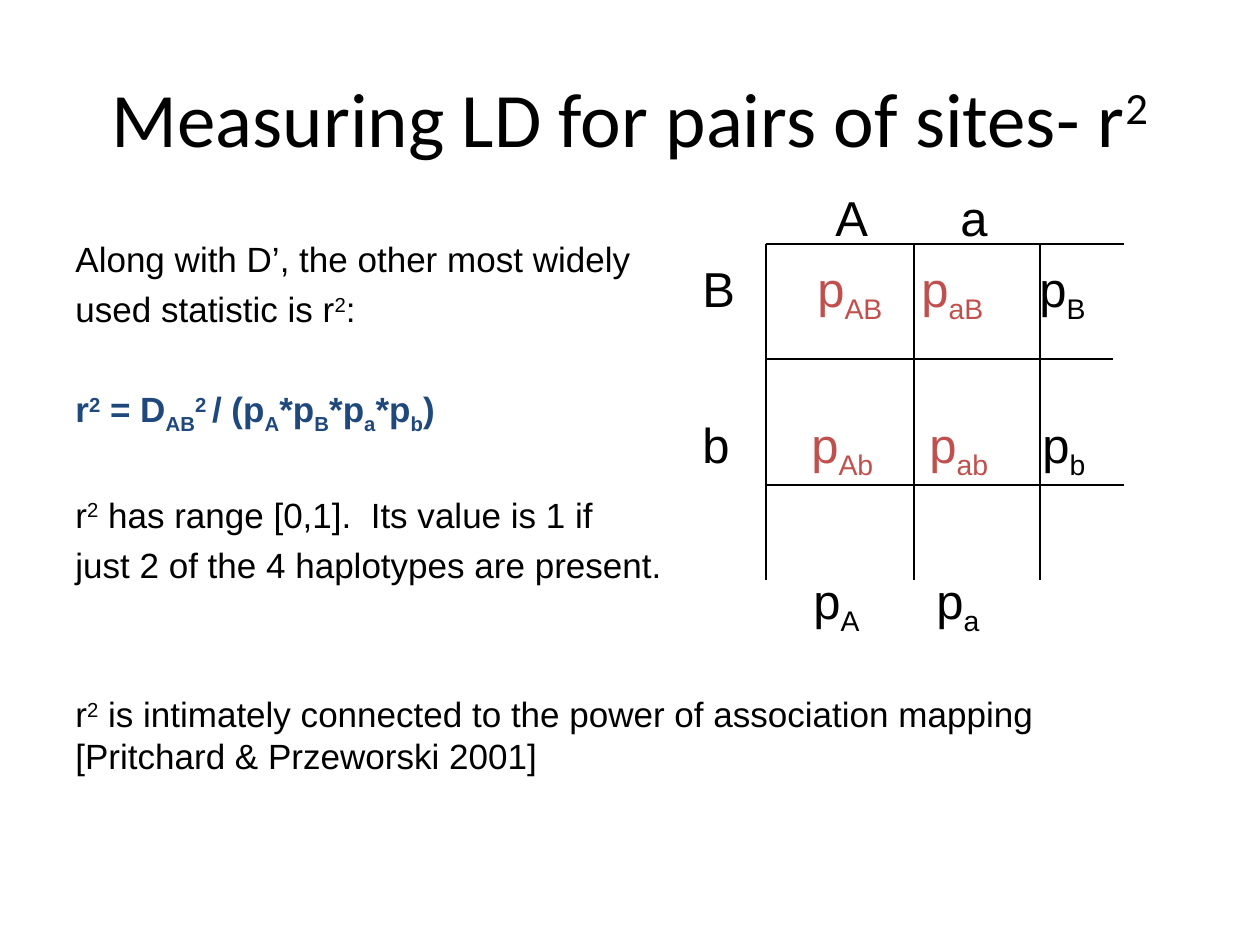
"""Build a slide on measuring linkage disequilibrium with r squared."""
from lxml import etree
from pptx import Presentation
from pptx.dml.color import RGBColor
from pptx.enum.shapes import MSO_CONNECTOR
from pptx.enum.text import MSO_ANCHOR, PP_ALIGN
from pptx.oxml.ns import qn
from pptx.util import Emu, Pt

PX = 914400 // 126
STRAIGHT = MSO_CONNECTOR.STRAIGHT
MIDDLE = MSO_ANCHOR.MIDDLE
CENTER = PP_ALIGN.CENTER
BLACK = RGBColor(0x00, 0x00, 0x00)
BLUE = RGBColor(0x1F, 0x49, 0x7D)
RED = RGBColor(0xC0, 0x50, 0x4D)
BASELINES = {"^": "30000", "_": "-25000"}

STATEMENTS = [
    ("Along with D’, the other most widely", 3, BLACK),
    ("used statistic is r|^2|:", 5, BLACK),
    ("r|^2| = D|_AB|^2 |/ (p|_A|*p|_B|*p|_a|*p|_b|)", 33, BLUE),
    ("r|^2| has range [0,1].  Its value is 1 if", 33, BLACK),
    ("just 2 of the 4 haplotypes are present.", 5, BLACK),
    ("r|^2| is intimately connected to the power of association mapping "
     "[Pritchard & Przeworski 2001]", 61, BLACK),
]
FREQUENCY_ROWS = [
    ("", 2, [(133, "A", BLACK), (258, "a", BLACK)]),
    ("B", 7, [(115, "p|_AB", RED), (219, "p|_aB", RED), (337, "p|_B", BLACK)]),
    ("b", 51, [(109, "p|_Ab", RED), (227, "p|_ab", RED), (340, "p|_b", BLACK)]),
    ("", 51, [(111, "p|_A", BLACK), (234, "p|_a", BLACK)]),
]
GRID_LEFT, GRID_TOP, GRID_BOTTOM = 766, 244, 580
GRID_COLUMNS = [GRID_LEFT, 914, 1040]
GRID_ROWS = [(GRID_TOP, 1124), (359, 1113), (485, 1124)]


def px(length):
    """Turn a length in px into EMU."""
    return Emu(length * PX)


def add_text_frame(slide, left, top, width, height):
    """Add a wrapping text box and return its text frame."""
    box = slide.shapes.add_textbox(px(left), px(top), px(width), px(height))
    box.text_frame.word_wrap = True
    return box.text_frame


def next_paragraph(frame, index):
    """Return the first paragraph of a frame, or a new one."""
    return frame.add_paragraph() if index else frame.paragraphs[0]


def style_paragraph(paragraph, size, name="Arial", color=BLACK, bold=False):
    """Set the font shared by all runs of a paragraph."""
    font = paragraph.font
    font.size, font.name, font.bold = Pt(size), name, bold
    font.color.rgb = color


def add_runs(paragraph, markup, color=None):
    """Add runs split at bars, with ^ raising and _ lowering a piece."""
    for piece in markup.split("|"):
        baseline = BASELINES.get(piece[0])
        run = paragraph.add_run()
        run.text = piece[1:] if baseline else piece
        if baseline:
            run.font._element.set("baseline", baseline)
        if color is not None:
            run.font.color.rgb = color


def add_tab_stops(paragraph, positions):
    """Give a paragraph left tab stops at the positions in px."""
    properties = paragraph._p.get_or_add_pPr()
    stops = etree.SubElement(properties, qn("a:tabLst"))
    for position in positions:
        etree.SubElement(stops, qn("a:tab"), pos=str(px(position)), algn="l")


def add_title(slide, markup):
    """Add the centred slide title."""
    frame = add_text_frame(slide, 63, 38, 1134, 157)
    frame.vertical_anchor = MIDDLE
    paragraph = frame.paragraphs[0]
    paragraph.alignment = CENTER
    style_paragraph(paragraph, 44, "Calibri")
    add_runs(paragraph, markup)


def add_statements(slide):
    """Add the explanation of the statistic."""
    frame = add_text_frame(slide, 63, 231, 1040, 556)
    for index, (markup, space, color) in enumerate(STATEMENTS):
        paragraph = next_paragraph(frame, index)
        paragraph.space_before = Pt(space)
        style_paragraph(paragraph, 20, color=color, bold=color == BLUE)
        add_runs(paragraph, markup)


def add_frequencies(slide):
    """Add the haplotype and allele frequencies, aligned by tab stops."""
    frame = add_text_frame(slide, 690, 181, 538, 449)
    for index, (label, space, cells) in enumerate(FREQUENCY_ROWS):
        paragraph = next_paragraph(frame, index)
        paragraph.space_before = Pt(space)
        add_tab_stops(paragraph, [position for position, _, _ in cells])
        style_paragraph(paragraph, 28)
        if label:
            add_runs(paragraph, label)
        for _, markup, color in cells:
            add_runs(paragraph, "\t" + markup, color)


def add_line(slide, start_x, start_y, end_x, end_y):
    """Add a thin black line without a shadow."""
    line = slide.shapes.add_connector(
        STRAIGHT, px(start_x), px(start_y), px(end_x), px(end_y))
    line.line.color.rgb = BLACK
    line.line.width = Pt(1)
    etree.SubElement(line._element.spPr, qn("a:effectLst"))


def add_grid(slide):
    """Add the lines of the frequency grid."""
    for x in GRID_COLUMNS:
        add_line(slide, x, GRID_TOP, x, GRID_BOTTOM)
    for y, right in GRID_ROWS:
        add_line(slide, GRID_LEFT, y, right, y)


def main():
    """Build and save the presentation."""
    presentation = Presentation()
    presentation.slide_width, presentation.slide_height = px(1260), px(945)
    slide = presentation.slides.add_slide(presentation.slide_layouts[6])
    add_title(slide, "Measuring LD for pairs of sites- r|^2")
    add_statements(slide)
    add_frequencies(slide)
    add_grid(slide)
    presentation.save("out.pptx")


if __name__ == "__main__":
    main()
